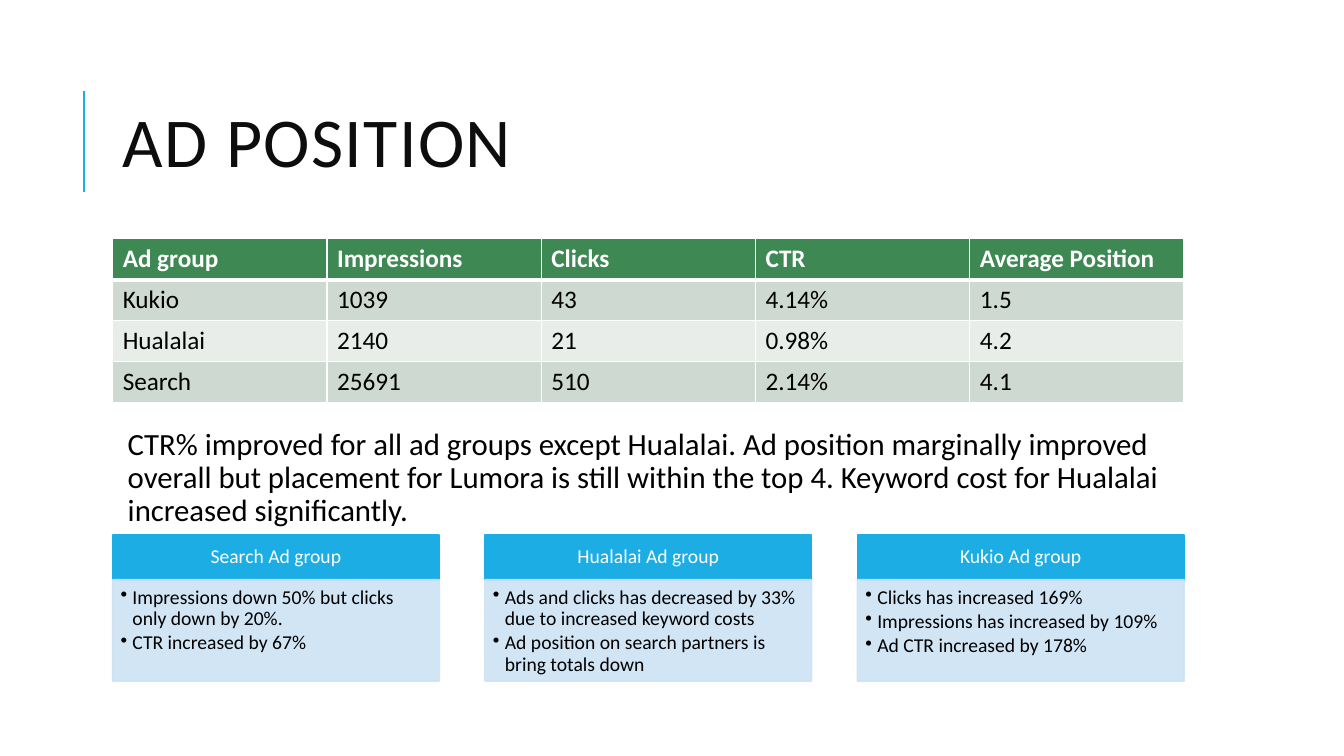
"""Build the ad position slide with its results table and three ad group cards."""
from dataclasses import dataclass

from lxml import etree
from pptx import Presentation
from pptx.dml.color import RGBColor
from pptx.enum import shapes, text
from pptx.oxml import ns
from pptx.util import Cm, Pt


@dataclass(frozen=True)
class Theme:
    font: str = "Calibri"
    ink: str = "000000"
    title_ink: str = "0D0D0D"
    white: str = "FFFFFF"
    accent: str = "1CADE4"
    card: str = "CDE3F5"
    header: str = "3E8853"
    bands: tuple = ("CEDAD1", "E8EDE9")
    title_size: int = 50
    summary_size: int = 22
    table_size: int = 18
    card_size: int = 14


theme = Theme()


def apply(target, values):
    """Set each named attribute of the target."""
    for name, value in values.items():
        setattr(target, name, value)


def write(frame, lines, size, color, frame_format, line_format, bold=False):
    """Fill a text frame with one formatted paragraph per line."""
    apply(frame, {"word_wrap": True, **frame_format})
    for number, line in enumerate(lines):
        paragraph = frame.add_paragraph() if number else frame.paragraphs[0]
        apply(paragraph, line_format)
        run = paragraph.add_run()
        run.text = line
        apply(run.font, {"name": theme.font, "size": Pt(size), "bold": bold})
        run.font.color.rgb = RGBColor.from_string(color)


prs = Presentation()
apply(prs, {"slide_width": Cm(33.87), "slide_height": Cm(19.05)})
slide = prs.slides.add_slide(prs.slide_layouts[6])
left, width = 2.84, 27
middle = text.MSO_ANCHOR.MIDDLE
top = text.MSO_ANCHOR.TOP

title_rule = slide.shapes.add_connector(
    shapes.MSO_CONNECTOR.STRAIGHT, Cm(2.11), Cm(4.83), Cm(2.11), Cm(2.29))
title_rule.line.color.rgb = RGBColor.from_string(theme.accent)
title_rule.line.width = Pt(1.5)
etree.SubElement(title_rule._element.spPr, ns.qn("a:effectLst"))

title = slide.shapes.add_textbox(Cm(left), Cm(1.63), Cm(width), Cm(4.17)).text_frame
write(title, ["AD POSITION"], theme.title_size, theme.title_ink,
      {"vertical_anchor": middle}, {"line_spacing": 0.8})
title.paragraphs[0].runs[0].font._element.set("spc", "100")

summary = slide.shapes.add_textbox(Cm(left), Cm(10.67), Cm(width), Cm(6.22)).text_frame
write(summary,
      ["CTR% improved for all ad groups except Hualalai. Ad position marginally improved "
       "overall but placement for Lumora is still within the top 4. Keyword cost for "
       "Hualalai increased significantly."],
      theme.summary_size, theme.ink,
      {"margin_left": Cm(0.13), "margin_top": Cm(0.13),
       "margin_right": Cm(0.13), "margin_bottom": Cm(0.13)},
      {"line_spacing": 0.9, "space_after": Pt(2)})
summary.paragraphs[0]._p.get_or_add_pPr().set("marL", str(Cm(0.25)))

results = [
    ["Ad group", "Impressions", "Clicks", "CTR", "Average Position"],
    ["Kukio", "1039", "43", "4.14%", "1.5"],
    ["Hualalai", "2140", "21", "0.98%", "4.2"],
    ["Search", "25691", "510", "2.14%", "4.1"],
]
row_height = 1.03
table = slide.shapes.add_table(
    len(results), len(results[0]), Cm(left), Cm(6.02), Cm(width),
    Cm(row_height * len(results))).table
apply(table, {"first_row": True, "horz_banding": False})
for row, values in enumerate(results):
    table.rows[row].height = Cm(row_height)
    is_header = row == 0
    for column, value in enumerate(values):
        cell = table.cell(row, column)
        write(cell.text_frame, [value], theme.table_size,
              theme.white if is_header else theme.ink, {}, {}, bold=is_header)
        borders = {"lnL": 1, "lnR": 1, "lnT": 3 if row == 1 else 1,
                   "lnB": 3 if is_header else 1}
        for side, points in borders.items():
            border = etree.SubElement(cell._tc.get_or_add_tcPr(), ns.qn(f"a:{side}"),
                                      w=str(Pt(points)))
            paint = etree.SubElement(border, ns.qn("a:solidFill"))
            etree.SubElement(paint, ns.qn("a:srgbClr"), val=theme.white)
        cell.fill.solid()
        cell.fill.fore_color.rgb = RGBColor.from_string(
            theme.header if is_header else theme.bands[(row - 1) % 2])

ad_groups = {
    "Search Ad group": ["Impressions down 50% but clicks only down by 20%.",
                        "CTR increased by 67%"],
    "Hualalai Ad group": ["Ads and clicks has decreased by 33% due to increased keyword costs",
                          "Ad position on search partners is bring totals down"],
    "Kukio Ad group": ["Clicks has increased 169%",
                       "Impressions has increased by 109%",
                       "Ad CTR increased by 178%"],
}
card_width = 8.23
card_step = (width - card_width) / (len(ad_groups) - 1)
heading_format = {"vertical_anchor": middle, "margin_left": Cm(0.28),
                  "margin_right": Cm(0.28), "margin_top": Cm(0.15),
                  "margin_bottom": Cm(0.15)}
findings_format = {"vertical_anchor": top, "margin_left": Cm(0.2),
                   "margin_right": Cm(0.28), "margin_top": Cm(0.2),
                   "margin_bottom": Cm(0.3)}
for position, (heading, findings) in enumerate(ad_groups.items()):
    parts = [
        (13.49, 1.12, theme.accent, [heading], theme.white, heading_format,
         {"alignment": text.PP_ALIGN.CENTER, "line_spacing": 0.9}),
        (14.61, 2.55, theme.card, findings, theme.ink, findings_format,
         {"alignment": text.PP_ALIGN.LEFT, "line_spacing": 0.9, "space_after": Pt(2.1)}),
    ]
    for y, height, color, lines, ink, frame_format, line_format in parts:
        panel = slide.shapes.add_shape(
            shapes.MSO_SHAPE.RECTANGLE, Cm(left + position * card_step), Cm(y),
            Cm(card_width), Cm(height))
        panel.shadow.inherit = False
        panel.fill.solid()
        panel.fill.fore_color.rgb = RGBColor.from_string(color)
        panel.line.color.rgb = RGBColor.from_string(color)
        panel.line.width = Pt(1.25)
        write(panel.text_frame, lines, theme.card_size, ink, frame_format, line_format)
    for tint in panel._element.spPr.iter(ns.qn("a:srgbClr")):
        etree.SubElement(tint, ns.qn("a:alpha"), val="90000")
    for finding in panel.text_frame.paragraphs:
        properties = finding._p.get_or_add_pPr()
        apply_indent = {"marL": Cm(0.3), "indent": -Cm(0.3)}
        for name, value in apply_indent.items():
            properties.set(name, str(value))
        etree.SubElement(properties, ns.qn("a:buChar"), char="•")

prs.save("out.pptx")
